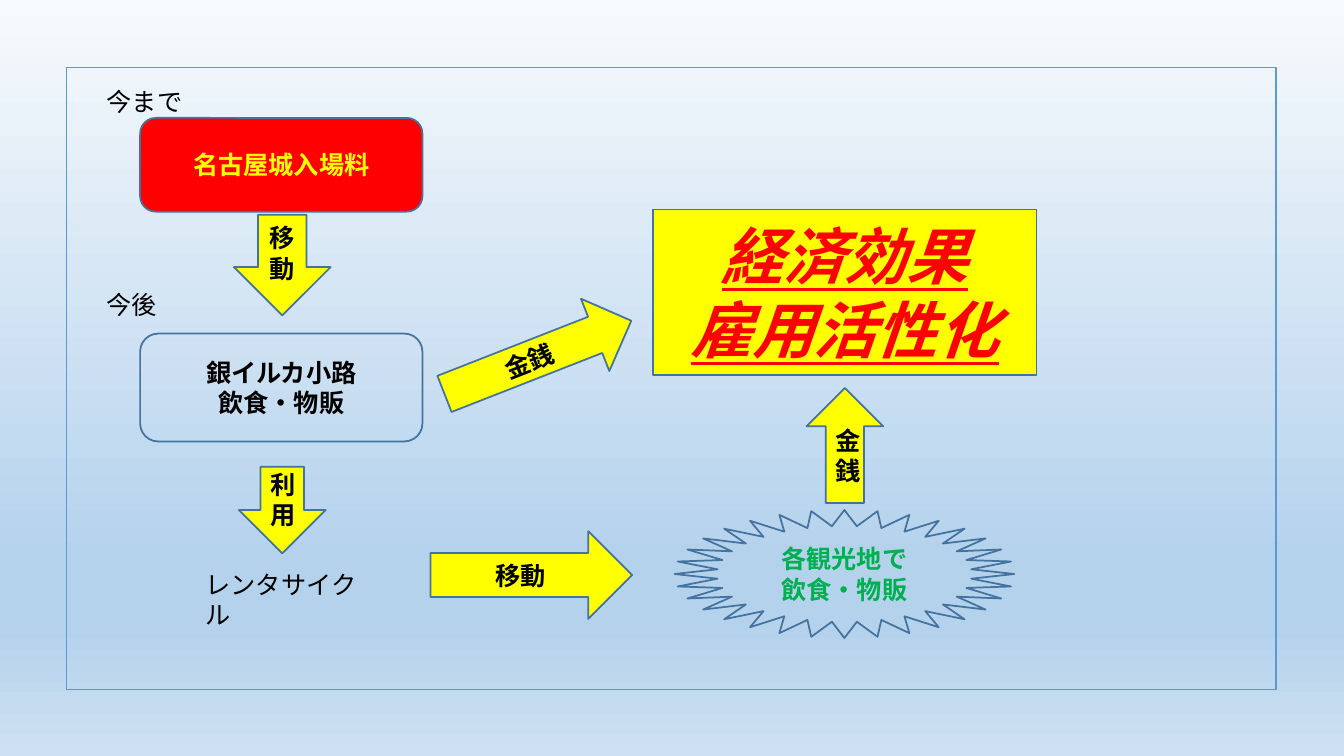
import pptx
import pptx.util
import pptx.dml.color
import pptx.enum.shapes
import pptx.enum.text
import pptx.oxml.ns
import lxml.etree

Kind = pptx.enum.shapes.MSO_SHAPE
Inches = pptx.util.Inches
qn = pptx.oxml.ns.qn

STOPS = [(0, "F7FAFD"), (74, "B5D2EC"), (83, "B5D2EC"), (100, "CEE1F2")]
EDGE = "43739E"
FACE = "Times New Roman"
BODY = {"size": pptx.util.Pt(18), "name": FACE}
BOLD = BODY | {"bold": True}
LOUD = BOLD | {"size": pptx.util.Pt(44), "italic": True, "underline": True}

FRAME = (0.66, 0.67, 12, 6.17)
LABELS = [
    ("今まで", (0.96, 0.81, 2.15, 0.4)),
    ("今後", (0.96, 2.82, 2.1, 0.4)),
    ("レンタサイクル", (1.94, 5.6, 1.69, 0.4)),
]
BOXES = [
    (Kind.ROUNDED_RECTANGLE, "名古屋城入場料", (1.39, 1.17, 2.8, 0.93), "FF0000", "FFFF00", BOLD),
    (Kind.ROUNDED_RECTANGLE, "銀イルカ小路\n飲食・物販", (1.39, 3.31, 2.8, 1.07), None, "000000", BOLD),
    (Kind.STAR_32_POINT, "各観光地で\n飲食・物販", (6.69, 5.06, 3.37, 1.27), None, "00B050", BOLD),
    (Kind.RECTANGLE, "経済効果\n雇用活性化", (6.48, 2.08, 3.8, 1.64), "FFFF00", "FF0000", LOUD),
]
ARROWS = [
    (Kind.DOWN_ARROW, "移動", (2.32, 2.13, 0.96, 1), 0),
    (Kind.DOWN_ARROW, "利用", (2.37, 4.63, 0.86, 0.86), 0),
    (Kind.RIGHT_ARROW, "移動", (4.27, 5.27, 2, 0.87), 0),
    (Kind.RIGHT_ARROW, "金銭", (4.34, 3.16, 1.99, 0.77), 338.6),
    (Kind.UP_ARROW, "金銭", (8, 3.85, 0.76, 1.14), 0),
]


def color(code):
    return pptx.dml.color.RGBColor.from_string(code)


def write(shape, text, ink, form, align):
    frame = shape.text_frame
    frame.word_wrap = True
    frame.text = text
    for para in frame.paragraphs:
        para.alignment = align
        for run in para.runs:
            run.font.color.rgb = color(ink)
            for key, value in form.items():
                setattr(run.font, key, value)


def draw(kind, place, fill, edge=EDGE):
    shape = slide.shapes.add_shape(kind, *map(Inches, place))
    shape.shadow.inherit = False
    if fill:
        shape.fill.solid()
        shape.fill.fore_color.rgb = color(fill)
    else:
        shape.fill.background()
    shape.line.color.rgb = color(edge)
    shape.line.width = pptx.util.Pt(1.25)
    return shape


def block(kind, text, place, fill, ink, form):
    shape = draw(kind, place, fill)
    write(shape, text, ink, form, pptx.enum.text.PP_ALIGN.CENTER)
    shape.text_frame.vertical_anchor = pptx.enum.text.MSO_ANCHOR.MIDDLE
    return shape


def shade():
    slide.background.fill.gradient()
    grad = next(slide.element.iter(qn("a:gradFill")))
    for child in list(grad):
        grad.remove(child)
    stops = lxml.etree.SubElement(grad, qn("a:gsLst"))
    for spot, code in STOPS:
        stop = lxml.etree.SubElement(stops, qn("a:gs"), pos=str(spot * 1000))
        lxml.etree.SubElement(stop, qn("a:srgbClr"), val=code)
    lxml.etree.SubElement(grad, qn("a:lin"), ang="5400000", scaled="0")


deck = pptx.Presentation()
deck.slide_width, deck.slide_height = Inches(13.33), Inches(7.5)
slide = deck.slides.add_slide(deck.slide_layouts[6])
shade()
draw(Kind.RECTANGLE, FRAME, None, "5B9BD5")

for box in BOXES:
    block(*box)

for text, place in LABELS:
    label = slide.shapes.add_textbox(*map(Inches, place))
    write(label, text, "000000", BODY, pptx.enum.text.PP_ALIGN.LEFT)
    label.text_frame.auto_size = pptx.enum.text.MSO_AUTO_SIZE.SHAPE_TO_FIT_TEXT

for kind, text, place, turn in ARROWS:
    block(kind, text, place, "FFFF00", "000000", BOLD).rotation = turn

deck.save("out.pptx")
